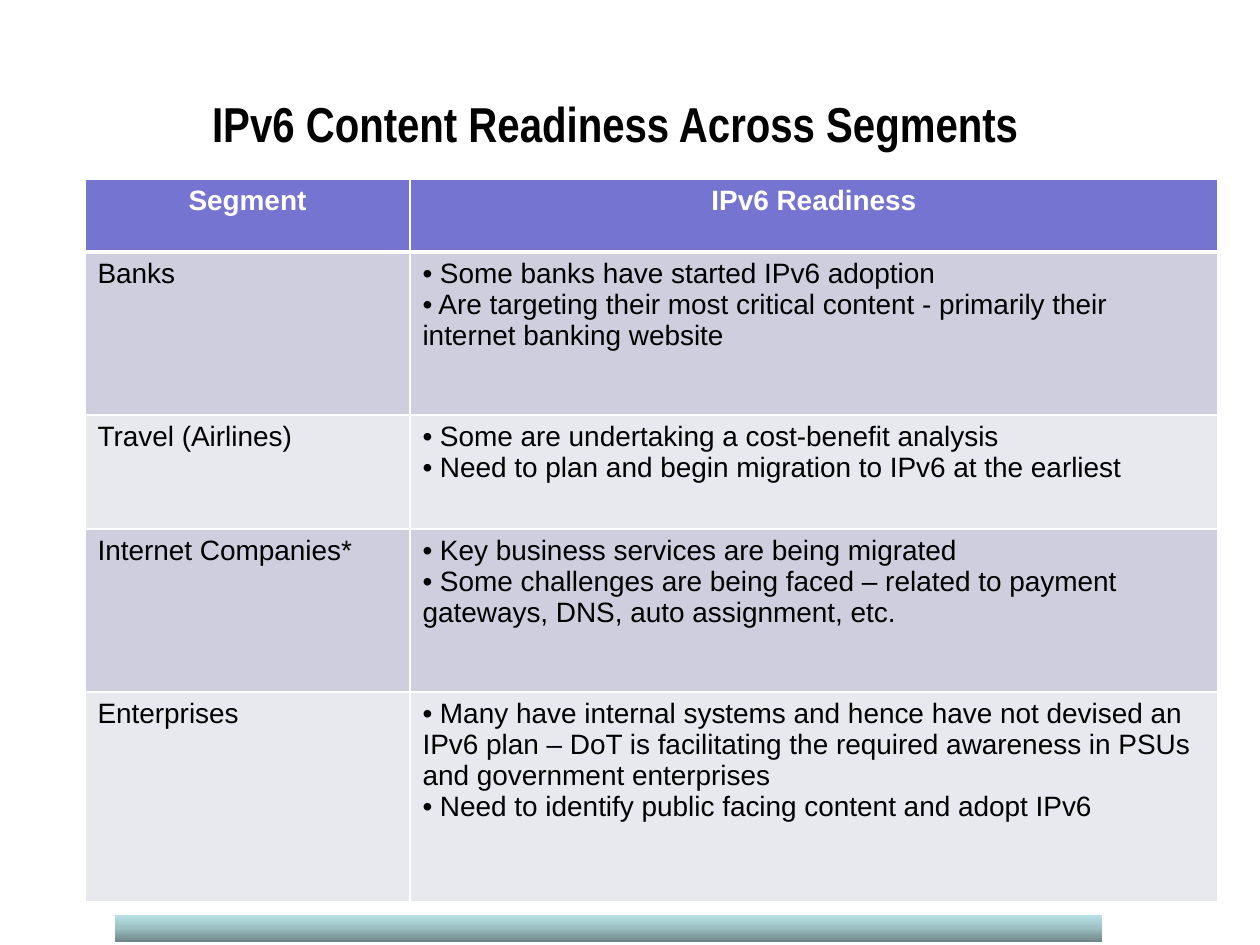
from copy import deepcopy

from lxml import etree
from pptx import Presentation
from pptx.dml.color import RGBColor
from pptx.enum.shapes import MSO_SHAPE
from pptx.enum.text import MSO_ANCHOR, PP_ALIGN
from pptx.oxml.ns import qn
from pptx.util import Emu, Pt

RECTANGLE = MSO_SHAPE.RECTANGLE
MIDDLE = MSO_ANCHOR.MIDDLE
LEFT, CENTER = PP_ALIGN.LEFT, PP_ALIGN.CENTER
TITLE_ONLY = 5
PX = 914400 // 126

TITLE = "IPv6 Content Readiness Across Segments"
HEADERS = ["Segment", "IPv6 Readiness"]
SEGMENTS = [
    ("Banks", [
        "Some banks have started IPv6 adoption",
        "Are targeting their most critical content - primarily their internet banking website",
    ]),
    ("Travel (Airlines)", [
        "Some are undertaking a cost-benefit analysis",
        "Need to plan and begin migration to IPv6 at the earliest",
    ]),
    ("Internet Companies*", [
        "Key business services are being migrated",
        "Some challenges are being faced – related to payment gateways, DNS, auto assignment, etc.",
    ]),
    ("Enterprises", [
        "Many have internal systems and hence have not devised an IPv6 plan – DoT is facilitating "
        "the required awareness in PSUs and government enterprises",
        "Need to identify public facing content and adopt IPv6",
    ]),
]
TITLE_BOX = (32, 95, 1166, 56)
TABLE_ORIGIN = (85, 179)
COLUMN_WIDTHS = [325, 808]
ROW_HEIGHTS = [73, 163, 114, 163, 210]
BAR_BOX = (115, 915, 987, 27)
BAR_GRADIENT = ["B8E3E6", "9BBFC2", "6D8688"]
HEADER_FILL = "7575D1"
BAND_FILLS = ["CECEDE", "E8E8EF"]
BLACK, WHITE = "000000", "FFFFFF"


def px(*lengths):
    return [Emu(length * PX) for length in lengths]


def color(value):
    return RGBColor.from_string(value)


def write(text_frame, lines, size=16, font="Arial", ink=BLACK, bold=False, align=LEFT, bullet=None):
    text_frame.word_wrap = True
    for index, line in enumerate(lines):
        paragraph = text_frame.add_paragraph() if index else text_frame.paragraphs[0]
        paragraph.alignment = align
        if bullet:
            properties = paragraph._p.get_or_add_pPr()
            properties.set("marL", "0")
            properties.set("indent", "0")
            etree.SubElement(properties, qn("a:buFont"), typeface="Arial")
            etree.SubElement(properties, qn("a:buChar"), char=bullet)
        run = paragraph.add_run()
        run.text = f" {line}" if bullet else line
        run.font.size = Pt(size)
        run.font.name = font
        run.font.bold = bold
        run.font.color.rgb = color(ink)


def style_cell(cell, fill, top=1, bottom=1):
    properties = cell._tc.get_or_add_tcPr()
    for side, width in (("L", 1), ("R", 1), ("T", top), ("B", bottom)):
        line = etree.SubElement(properties, qn(f"a:ln{side}"), w=str(Pt(width)))
        solid = etree.SubElement(line, qn("a:solidFill"))
        etree.SubElement(solid, qn("a:srgbClr"), val=WHITE)
    cell.fill.solid()
    cell.fill.fore_color.rgb = color(fill)


def add_title(slide):
    title = slide.shapes.title
    title.left, title.top, title.width, title.height = px(*TITLE_BOX)
    title.text_frame.vertical_anchor = MIDDLE
    write(title.text_frame, [TITLE], size=28, font="Arial Narrow", bold=True, align=CENTER)


def add_bar(slide):
    bar = slide.shapes.add_shape(RECTANGLE, *px(*BAR_BOX))
    bar.shadow.inherit = False
    bar.line.fill.background()
    bar.fill.gradient()
    bar.fill.gradient_angle = 270
    first = bar.fill._fill._gradFill.gsLst[0]
    first.addnext(deepcopy(first))
    for index, (stop, value) in enumerate(zip(bar.fill.gradient_stops, BAR_GRADIENT)):
        stop.position = index / (len(BAR_GRADIENT) - 1)
        stop.color.rgb = color(value)


def add_readiness_table(slide):
    box = px(*TABLE_ORIGIN, sum(COLUMN_WIDTHS), sum(ROW_HEIGHTS))
    table = slide.shapes.add_table(len(ROW_HEIGHTS), len(COLUMN_WIDTHS), *box).table
    for column, width in zip(table.columns, px(*COLUMN_WIDTHS)):
        column.width = width
    for row, height in zip(table.rows, px(*ROW_HEIGHTS)):
        row.height = height
    for index, header in enumerate(HEADERS):
        cell = table.cell(0, index)
        style_cell(cell, HEADER_FILL, bottom=3)
        write(cell.text_frame, [header], ink=WHITE, bold=True, align=CENTER)
    for index, (segment, points) in enumerate(SEGMENTS):
        for column, (lines, bullet) in enumerate((([segment], None), (points, "•"))):
            cell = table.cell(index + 1, column)
            style_cell(cell, BAND_FILLS[index % 2], top=1 if index else 3)
            write(cell.text_frame, lines, bullet=bullet)


def main():
    """Build the IPv6 readiness slide and save it."""
    presentation = Presentation()
    presentation.slide_width, presentation.slide_height = px(1260, 945)
    slide = presentation.slides.add_slide(presentation.slide_layouts[TITLE_ONLY])
    add_title(slide)
    add_bar(slide)
    add_readiness_table(slide)
    presentation.save("out.pptx")


if __name__ == "__main__":
    main()
